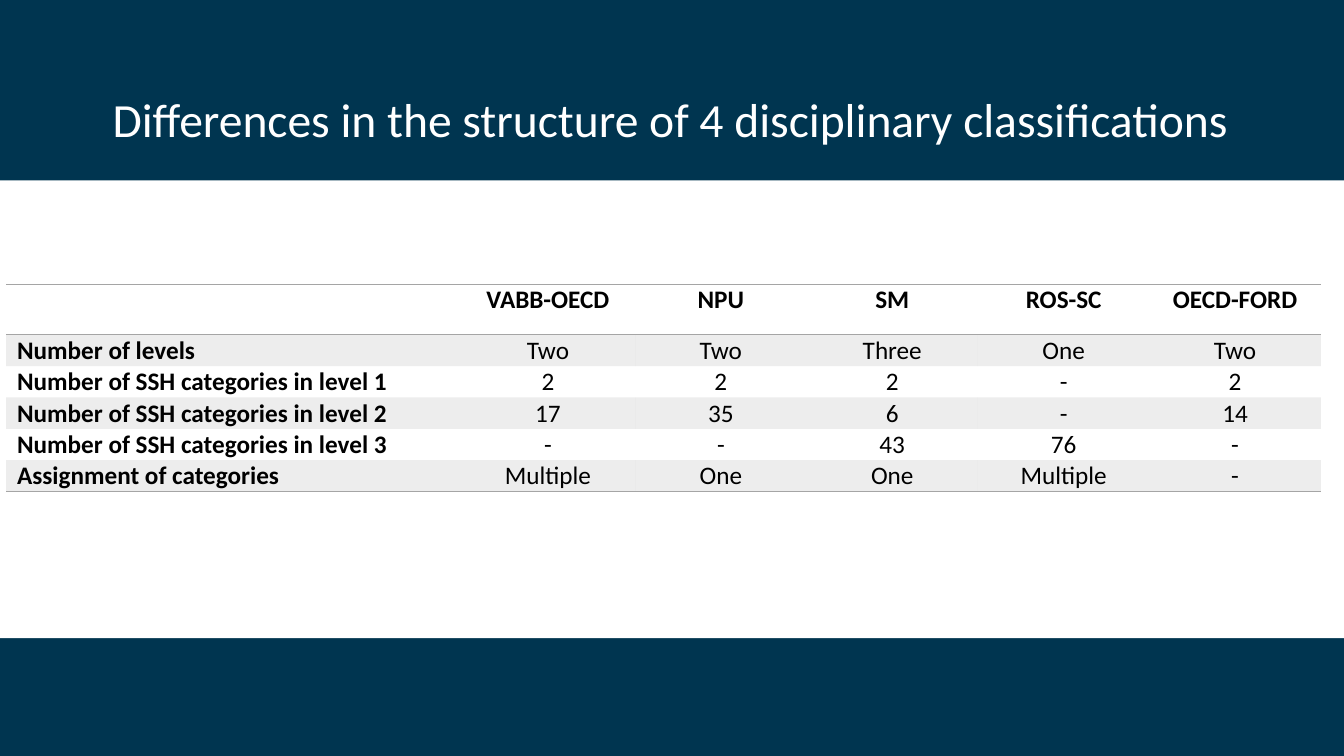
from lxml.etree import SubElement
from pptx import Presentation
from pptx.dml.color import RGBColor
from pptx.enum.shapes import MSO_SHAPE
from pptx.enum.text import MSO_ANCHOR, PP_ALIGN
from pptx.oxml import parse_xml
from pptx.oxml.ns import nsdecls, qn
from pptx.util import Inches, Pt

COLORS = {"navy": "003550", "white": "FFFFFF", "black": "000000", "gray": "A5A5A5"}
NO_STYLE = "{2D5ABB26-0587-4C30-8999-92F81FD0307C}"
ROWS = [
    ["", "VABB-OECD", "NPU", "SM", "ROS-SC", "OECD-FORD"],
    ["Number of levels", "Two", "Two", "Three", "One", "Two"],
    ["Number of SSH categories in level 1", "2", "2", "2", "-", "2"],
    ["Number of SSH categories in level 2", "17", "35", "6", "-", "14"],
    ["Number of SSH categories in level 3", "-", "-", "43", "76", "-"],
    ["Assignment of categories", "Multiple", "One", "One", "Multiple", "-"],
]
COL_WIDTHS = [4.51, 1.73, 1.7, 1.7, 1.7, 1.7]
ROW_HEIGHTS = [0.5] + [0.31] * 5


def add_run(p, text, size, color, bold=False):
    r = p.add_run()
    r.text = text
    r.font.name = "Calibri"
    r.font.size = Pt(size)
    r.font.bold = bold
    r.font.color.rgb = RGBColor.from_string(COLORS[color])


def add_border(cell, side):
    cell._tc.get_or_add_tcPr().append(parse_xml(
        f'<a:{side} {nsdecls("a")} w="12700"><a:solidFill>'
        f'<a:srgbClr val="{COLORS["gray"]}"/></a:solidFill></a:{side}>'))


prs = Presentation()
prs.slide_width = Inches(13.33)
prs.slide_height = Inches(7.5)
s = prs.slides.add_slide(prs.slide_layouts[5])
s.background.fill.solid()
s.background.fill.fore_color.rgb = RGBColor.from_string(COLORS["navy"])

title = s.shapes.title
title.left, title.top = Inches(0.9), Inches(0.49)
title.width, title.height = Inches(11.5), Inches(1.45)
tf = title.text_frame
tf.vertical_anchor = MSO_ANCHOR.MIDDLE
p = tf.paragraphs[0]
p.alignment = PP_ALIGN.CENTER
p.line_spacing = 0.9
add_run(p, "Differences in the structure of 4 disciplinary classifications", 34, "white")

panel = s.shapes.add_shape(
    MSO_SHAPE.RECTANGLE, 0, Inches(1.79), prs.slide_width, Inches(4.54))
panel.shadow.inherit = False
panel.fill.solid()
panel.fill.fore_color.rgb = RGBColor.from_string(COLORS["white"])
panel.line.fill.background()

frame = s.shapes.add_table(
    len(ROWS), len(COL_WIDTHS), Inches(0.06), Inches(2.82),
    Inches(sum(COL_WIDTHS)), Inches(sum(ROW_HEIGHTS)))
table = frame.table
table.first_row = False
table.horz_banding = False
table._tbl.tblPr.find(qn("a:tableStyleId")).text = NO_STYLE
for col, width in zip(table.columns, COL_WIDTHS):
    col.width = Inches(width)
for row, height in zip(table.rows, ROW_HEIGHTS):
    row.height = Inches(height)

for i, values in enumerate(ROWS):
    for j, text in enumerate(values):
        cell = table.cell(i, j)
        cell.margin_left = cell.margin_right = Inches(0.11)
        cell.margin_top = cell.margin_bottom = 0
        if i == 0:
            add_border(cell, "lnT")
        if i in (0, len(ROWS) - 1):
            add_border(cell, "lnB")
        if i % 2:
            cell.fill.solid()
            cell.fill.fore_color.rgb = RGBColor.from_string(COLORS["gray"])
            rgb = cell._tc.tcPr.find(qn("a:solidFill")).find(qn("a:srgbClr"))
            SubElement(rgb, qn("a:alpha")).set("val", "20000")
        else:
            cell.fill.background()
        if text:
            p = cell.text_frame.paragraphs[0]
            p.alignment = PP_ALIGN.CENTER if j else PP_ALIGN.LEFT
            p.line_spacing = 1.02
            add_run(p, text, 18, "black", i == 0 or j == 0)

prs.save("out.pptx")
